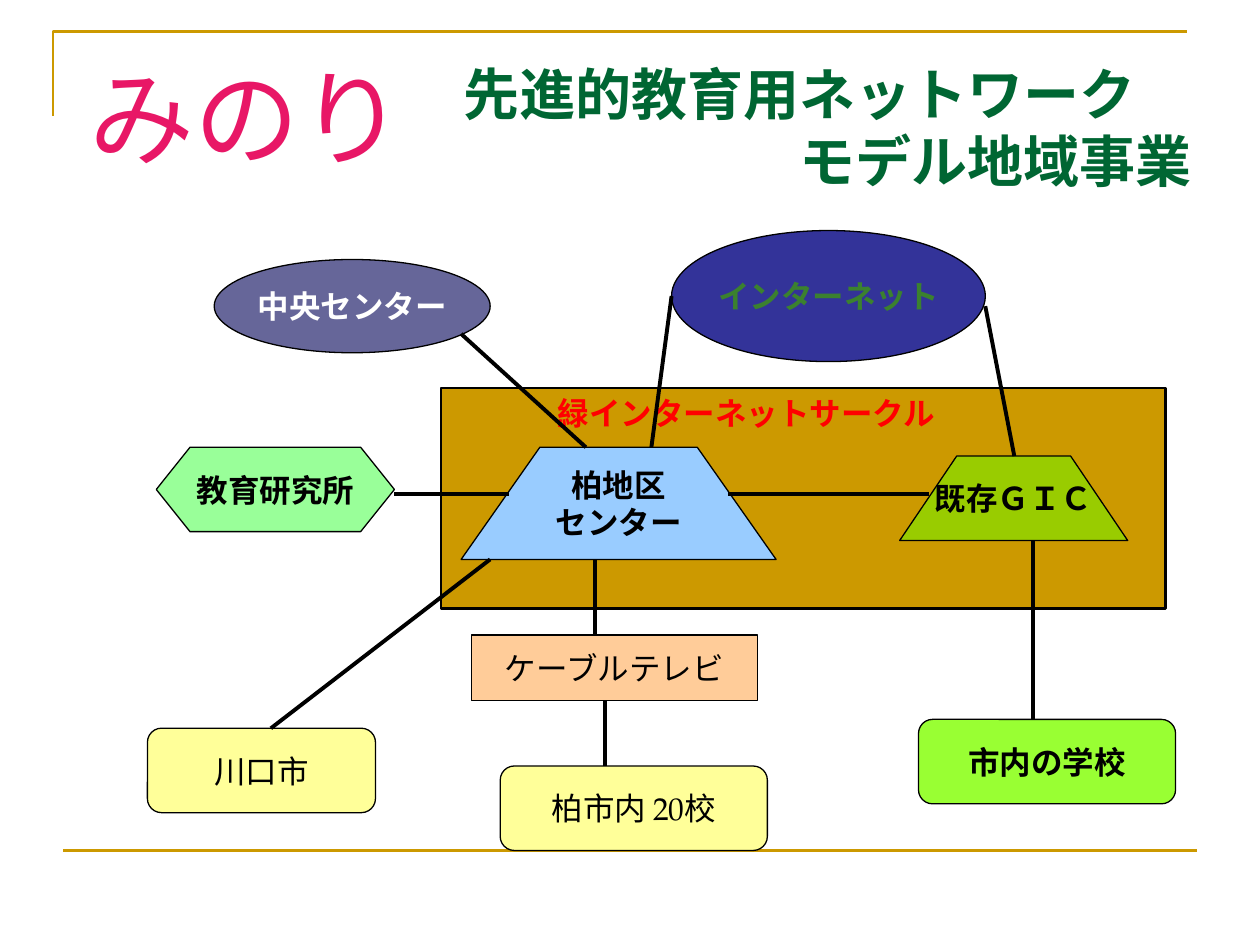
from lxml.etree import SubElement
from pptx import Presentation
from pptx.dml.color import RGBColor
from pptx.enum.shapes import MSO_CONNECTOR, MSO_SHAPE
from pptx.enum.text import MSO_ANCHOR, PP_ALIGN
from pptx.oxml.ns import qn
from pptx.util import Inches, Pt

COLUMNS, ROWS = 10, 7.5
BODY, HEADING, DISPLAY = "TeX Gyre Pagella", "Noto Sans", "Noto Sans CJK JP"
LINE_PITCH = 1.2
COLORS = {
    "black": "000000", "white": "FFFFFF", "gold": "CC9900", "title": "006633",
    "pink": "E81766", "red": "FF0000", "yellow": "FFFF99", "lime": "99FF33",
    "olive": "99CC00", "sky": "99CCFF", "peach": "FFCC99", "mint": "99FF99",
    "navy": "333399", "green": "3B812F", "slate": "666699",
}

UNION = (3.5, 3.08, 5.75, 1.75)
CORNER = [(0.42, 0.92), (0.42, 0.25), (9.42, 0.25)]
FOOTER = ((0.5, 6.75), (9.5, 6.75))

ROUND, RECT, OVAL = MSO_SHAPE.ROUNDED_RECTANGLE, MSO_SHAPE.RECTANGLE, MSO_SHAPE.OVAL
NODES = [
    (ROUND, (3.97, 6.08, 2.12, 0.67), "yellow", ["柏市内 20校"], "black", False),
    (ROUND, (7.29, 5.71, 2.04, 0.67), "lime", ["市内の学校"], "black", True),
    ("trapezoid", (7.14, 3.62, 1.81, 0.67), "olive", ["既存ＧＩＣ"], "black", True),
    ("trapezoid", (3.66, 3.55, 2.5, 0.89), "sky", ["柏地区", "センター"], "black", True),
    (RECT, (3.74, 5.04, 2.27, 0.52), "peach", ["ケーブルテレビ"], "black", False),
    (MSO_SHAPE.HEXAGON, (1.24, 3.55, 1.89, 0.67), "mint", ["教育研究所"], "black", True),
    (OVAL, (5.33, 1.83, 2.49, 1.04), "navy", ["インターネット"], "green", True),
    (ROUND, (1.17, 5.78, 1.81, 0.67), "yellow", ["川口市"], "black", False),
    (OVAL, (1.7, 2.06, 2.19, 0.74), "slate", ["中央センター"], "white", True),
]
LINKS = [
    ((2.15, 5.78), (3.89, 4.44)),
    ((4.72, 5.04), (4.72, 4.44)),
    ((8.2, 5.71), (8.2, 4.29)),
    ((4.8, 6.08), (4.8, 5.56)),
    ((5.17, 3.55), (5.33, 2.35)),
    ((8.05, 3.62), (7.82, 2.43)),
    ((5.78, 3.92), (7.37, 3.92)),
    ((3.13, 3.92), (4.04, 3.92)),
    ((3.66, 2.65), (4.65, 3.55)),
]

deck = Presentation()
deck.slide_width, deck.slide_height = Inches(COLUMNS), Inches(ROWS)
page = deck.slides.add_slide(deck.slide_layouts[6])


def inches(values):
    return [Inches(value) for value in values]


def color(name):
    return RGBColor.from_string(COLORS[name])


def paint(shape, fill, line, weight):
    shape.shadow.inherit = False
    if fill:
        shape.fill.solid()
        shape.fill.fore_color.rgb = color(fill)
    else:
        shape.fill.background()
    shape.line.color.rgb = color(line)
    shape.line.width = Pt(weight)


def write(shape, lines, ink, bold, size=18, latin=BODY, wrap=False,
          aligns=(PP_ALIGN.CENTER,) * 2, anchor=MSO_ANCHOR.MIDDLE):
    frame = shape.text_frame
    frame.word_wrap = wrap
    frame.vertical_anchor = anchor
    frame.text = "\n".join(lines)
    for para, align in zip(frame.paragraphs, aligns):
        para.alignment = align
        if latin != DISPLAY:
            para.line_spacing = Pt(size * LINE_PITCH)
        font = para.font
        font.size, font.bold, font.name = Pt(size), bold, latin
        font.color.rgb = color(ink)
        properties = para._p.pPr.find(qn("a:defRPr"))
        SubElement(properties, qn("a:ea")).set("typeface", DISPLAY)


def add_text(box, *args, **options):
    label = page.shapes.add_textbox(*inches(box))
    write(label, *args, **options)
    return label


def add_outline(points, closed):
    builder = page.shapes.build_freeform(*inches(points[0]))
    builder.add_line_segments([inches(point) for point in points[1:]], close=closed)
    return builder.convert_to_shape()


def add_trapezoid(box):
    left, top, width, height = box
    right, bottom, slant = left + width, top + height, width / 4
    return add_outline([(left, bottom), (left + slant, top),
                        (right - slant, top), (right, bottom)], True)


def add_line(start, end, line, weight):
    link = page.shapes.add_connector(MSO_CONNECTOR.STRAIGHT, *inches(start + end))
    link.line.color.rgb = color(line)
    link.line.width = Pt(weight)
    SubElement(link._element.spPr, qn("a:effectLst"))


paint(add_outline(CORNER, False), None, "gold", 1.5)
add_line(*FOOTER, "gold", 1.5)
paint(page.shapes.add_shape(RECT, *inches(UNION)), "gold", "black", 1.5)

add_text((3.58, 0.42, 5.98, 1.17), ["先進的教育用ネットワーク", "モデル地域事業"],
         "title", True, size=32, latin=HEADING, wrap=True,
         aligns=(PP_ALIGN.LEFT, PP_ALIGN.RIGHT))
project = add_text((0.67, 0.33, 2.58, 1.17), ["みのり"], "pink", False,
                   size=60, latin=DISPLAY)
project.text_frame.margin_left = project.text_frame.margin_right = 0

for kind, box, fill, lines, ink, bold in NODES:
    if kind == "trapezoid":
        node = add_trapezoid(box)
    else:
        node = page.shapes.add_shape(kind, *inches(box))
    if kind == MSO_SHAPE.HEXAGON:
        node.adjustments[0] = 0.4
    paint(node, fill, "black", 0.75)
    write(node, lines, ink, bold)

add_text((4.33, 3.08, 4.18, 0.5), ["緑インターネットサークル"], "red", True,
         wrap=True, aligns=(PP_ALIGN.LEFT,), anchor=MSO_ANCHOR.TOP)

for start, end in LINKS:
    add_line(start, end, "black", 2.25)

deck.save("out.pptx")
